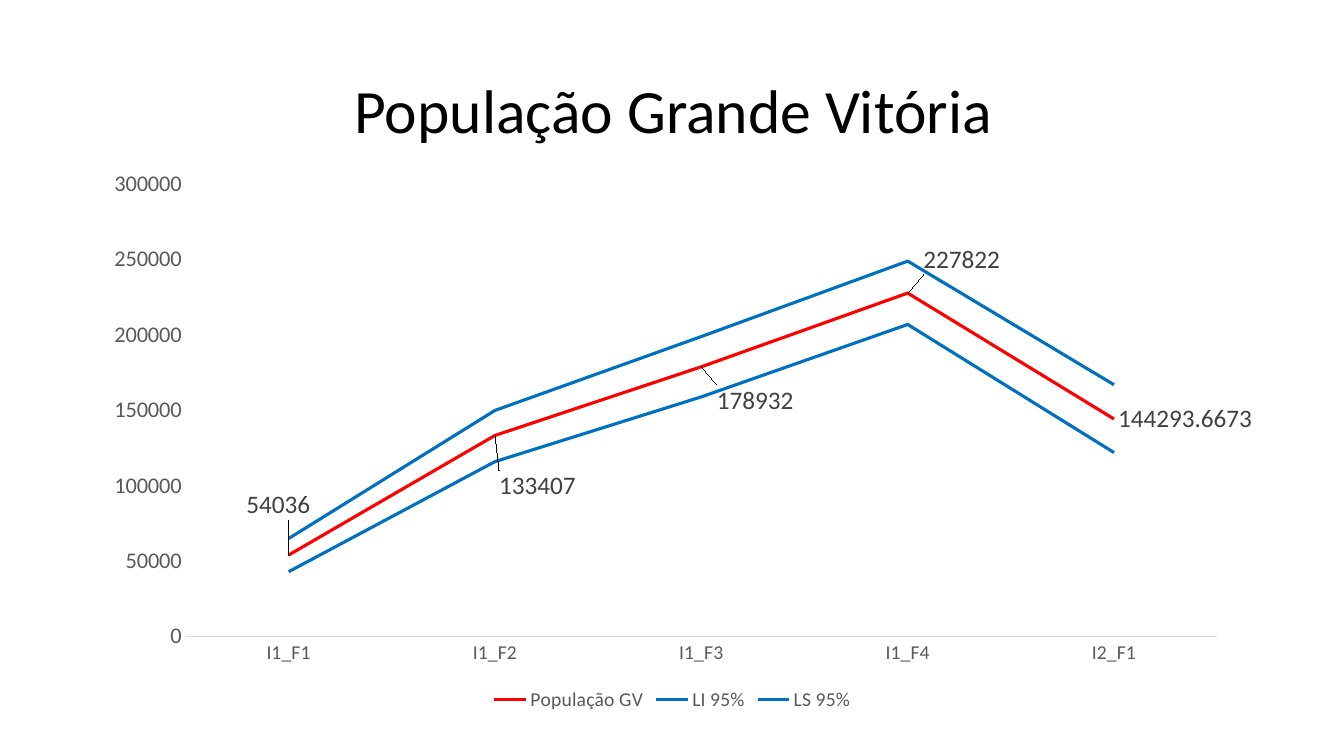
from dataclasses import dataclass
from lxml.etree import SubElement
from pptx import Presentation
from pptx.chart.data import CategoryChartData as ChartData
from pptx.dml.color import RGBColor as Color
from pptx.enum.chart import XL_CHART_TYPE as Kind
from pptx.enum.chart import XL_LABEL_POSITION as Spot
from pptx.enum.chart import XL_LEGEND_POSITION as Side
from pptx.enum.chart import XL_TICK_MARK as Tick
from pptx.enum.text import MSO_ANCHOR as Anchor
from pptx.enum.text import PP_ALIGN as Align
from pptx.oxml import parse_xml
from pptx.oxml.ns import nsdecls, qn
from pptx.util import Inches, Pt


@dataclass(frozen=True)
class Theme:
    face: str = "Calibri"
    black: str = "000000"
    gray: str = "595959"
    dark: str = "404040"
    rule: str = "D9D9D9"
    red: str = "FF0000"
    blue: str = "0070C0"
    title: int = 44
    label: int = 18
    value: int = 16
    small: int = 14
    base: int = 10


THEME = Theme()
PERIODS = ["I1_F1", "I1_F2", "I1_F3", "I1_F4", "I2_F1"]
SERIES = [
    ("População GV", THEME.red, [54036, 133407, 178932, 227822, 144293.6673]),
    ("LI 95%", THEME.blue, [43000, 116000, 159000, 207000, 122000]),
    ("LS 95%", THEME.blue, [65000, 150000, 199000, 249000, 167000]),
]
# Label shifts, as shares of the chart's width and height
SHIFTS = [(-0.04, -0.09), (0, 0.09), (0.01, 0.06), (0.01, -0.06)]


def style(font, size, color):
    font.name = THEME.face
    font.size = Pt(size)
    font.color.rgb = Color.from_string(color)


def layout(**parts):
    """Return a manual layout element with the given parts in order."""
    root = parse_xml(f"<c:layout {nsdecls('c')}><c:manualLayout/></c:layout>")
    for name, val in parts.items():
        SubElement(root[0], qn(f"c:{name}")).set("val", str(val))
    return root


def add_title(slide, text):
    box = slide.shapes.add_textbox(
        Inches(0.93), Inches(0.4), Inches(11.5), Inches(1.45))
    frame = box.text_frame
    frame.word_wrap = True
    frame.vertical_anchor = Anchor.MIDDLE
    frame.text = text
    para = frame.paragraphs[0]
    para.alignment = Align.CENTER
    para.line_spacing = 0.9
    style(para.runs[0].font, THEME.title, THEME.black)


def format_axes(chart):
    for axis, size in ((chart.category_axis, THEME.small),
                       (chart.value_axis, THEME.value)):
        axis.major_tick_mark = axis.minor_tick_mark = Tick.NONE
        axis.has_major_gridlines = False
        style(axis.tick_labels.font, size, THEME.gray)
    line = chart.category_axis.format.line
    line.width = Pt(0.75)
    line.color.rgb = Color.from_string(THEME.rule)
    scale = chart.value_axis
    scale.format.line.fill.background()
    scale.minimum_scale, scale.maximum_scale = 0, 300000
    scale.major_unit = 50000


def add_labels(series):
    labels = series.data_labels
    labels.show_value = True
    labels.position = Spot.RIGHT
    style(labels.font, THEME.label, THEME.dark)
    for i, (x, y) in enumerate(SHIFTS):
        label = series.points[i].data_label
        style(label.font, THEME.label, THEME.dark)
        label.position = Spot.RIGHT
    nodes = series._element.findall(f"{qn('c:dLbls')}/{qn('c:dLbl')}")
    for node, (x, y) in zip(nodes, SHIFTS):
        node.insert(1, layout(x=x, y=y))


def add_lines(slide):
    data = ChartData(number_format="General")
    data.categories = PERIODS
    for name, _, vals in SERIES:
        data.add_series(name, vals)
    chart = slide.shapes.add_chart(
        Kind.LINE, Inches(0.92), Inches(1.58), Inches(11.5), Inches(5.52),
        data).chart
    style(chart.font, THEME.base, THEME.black)
    chart.has_title = False
    chart.has_legend = True
    chart.legend.position = Side.BOTTOM
    chart.legend.include_in_layout = False
    style(chart.legend.font, THEME.small, THEME.gray)
    format_axes(chart)
    plot = chart.plots[0]
    plot.vary_by_categories = False
    for series, (_, color, _) in zip(plot.series, SERIES):
        series.smooth = False
        series.format.line.width = Pt(2.25)
        series.format.line.color.rgb = Color.from_string(color)
    add_labels(plot.series[0])
    area = chart._chartSpace.chart.plotArea
    for old in area.findall(qn("c:layout")):
        area.remove(old)
    area.insert(0, layout(layoutTarget="inner", xMode="edge", yMode="edge",
                          x=0.08, y=0.045, w=0.89, h=0.813))


def main():
    deck = Presentation()
    deck.slide_width, deck.slide_height = Inches(13.33), Inches(7.5)
    slide = deck.slides.add_slide(deck.slide_layouts[6])
    add_title(slide, "População Grande Vitória")
    add_lines(slide)
    deck.save("out.pptx")


if __name__ == "__main__":
    main()
